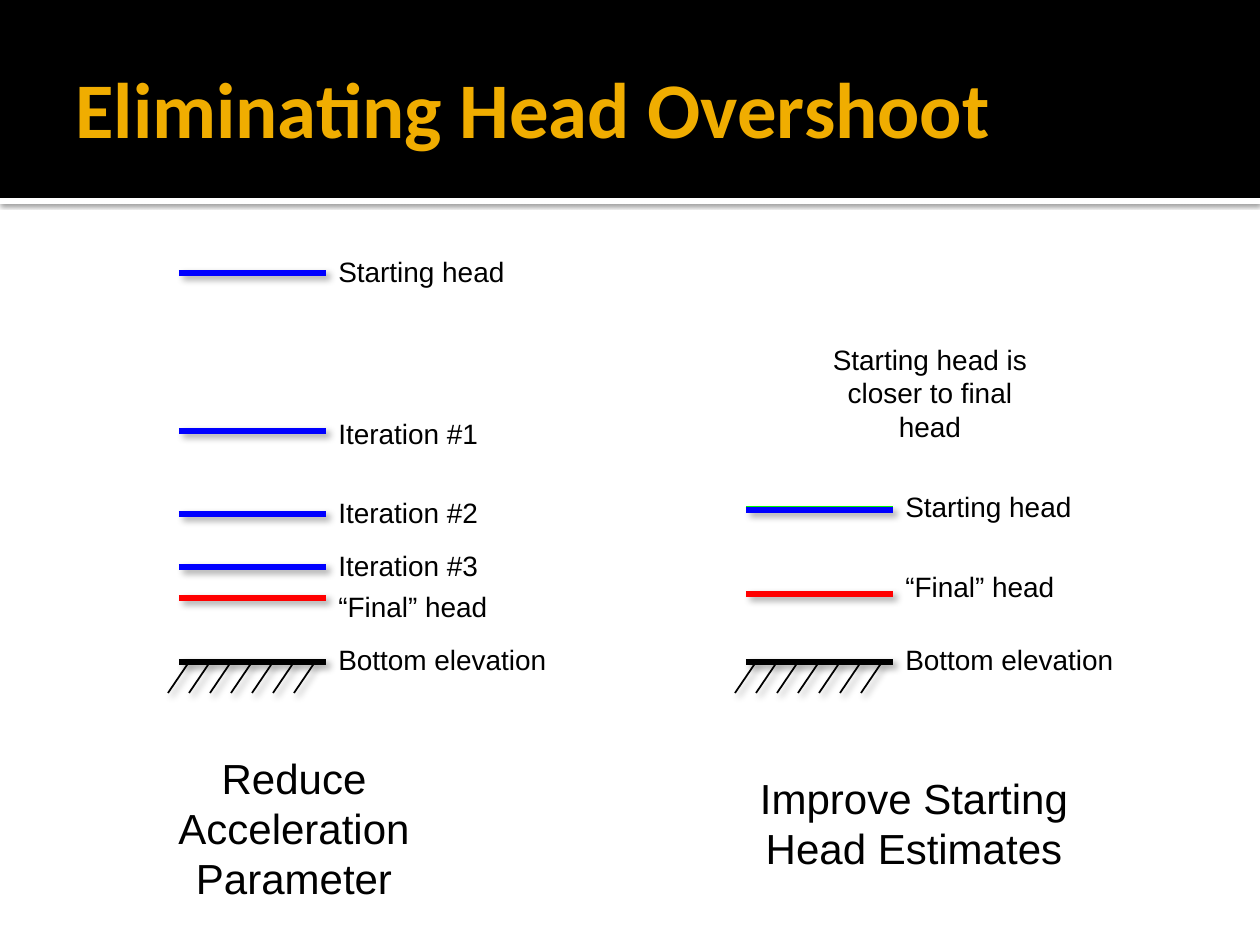
from lxml.etree import SubElement
from pptx import Presentation
from pptx.dml.color import RGBColor
from pptx.enum.shapes import MSO_CONNECTOR, MSO_SHAPE
from pptx.enum.text import MSO_ANCHOR, MSO_AUTO_SIZE, PP_ALIGN
from pptx.oxml.ns import qn
from pptx.util import Pt

SCALE = 914400 / 126
BLACK, WHITE, RED, GREEN, BLUE = "000000", "FFFFFF", "FF0000", "00FF00", "0000FF"
GOLD = "F0AD00"
LEFT, RIGHT = 179, 746  # left ends of the head lines in the two diagrams
LINE_LENGTH = 147
BOTTOM_Y = 662


def px(n):
    return round(n * SCALE)


def color(hex_string):
    return RGBColor.from_string(hex_string)


def add_shadow(sp, alpha, blur, distance, angle):
    """Lengths are points, alpha is per cent and angle is degrees."""
    effects = SubElement(sp._element.spPr, qn("a:effectLst"))
    shadow = SubElement(effects, qn("a:outerShdw"), blurRad=str(Pt(blur)),
                        dist=str(Pt(distance)), dir=str(angle * 60000),
                        algn="ctr", rotWithShape="0")
    clr = SubElement(shadow, qn("a:srgbClr"), val=BLACK)
    SubElement(clr, qn("a:alpha"), val=str(alpha * 1000))


def add_band(s, y, height, fill):
    sp = s.shapes.add_shape(MSO_SHAPE.RECTANGLE, 0, px(y), px(1260), px(height))
    sp.fill.solid()
    sp.fill.fore_color.rgb = color(fill)
    sp.line.fill.background()
    return sp


def add_text(s, text, x, y, width, height, size=16, align=PP_ALIGN.LEFT):
    sp = s.shapes.add_textbox(px(x), px(y), px(width), px(height))
    tf = sp.text_frame
    tf.word_wrap = True
    tf.auto_size = MSO_AUTO_SIZE.SHAPE_TO_FIT_TEXT
    tf.text = text
    p = tf.paragraphs[0]
    p.alignment = align
    font = p.runs[0].font
    font.name, font.size = "Arial", Pt(size)
    font.color.rgb = color(BLACK)
    return sp


def add_title(s, text):
    tf = add_text(s, text, 63, 21, 1134, 173, 45).text_frame
    tf.auto_size = MSO_AUTO_SIZE.NONE
    tf.vertical_anchor = MSO_ANCHOR.MIDDLE
    font = tf.paragraphs[0].runs[0].font
    font.name, font.bold = "Calibri", True
    font.color.rgb = color(GOLD)


def add_line(s, x1, y1, x2, y2, stroke, width, shadow=True):
    line = s.shapes.add_connector(MSO_CONNECTOR.STRAIGHT,
                                  px(x1), px(y1), px(x2), px(y2))
    line.line.color.rgb = color(stroke)
    line.line.width = Pt(width)
    if shadow:
        add_shadow(line, 40, 4, 3, 45)
    else:
        SubElement(line._element.spPr, qn("a:effectLst"))


def add_level(s, x, y, stroke, shadow=True):
    add_line(s, x, y, x + LINE_LENGTH, y, stroke, 3, shadow)


def add_label(s, x, y, text):
    add_text(s, text, x + LINE_LENGTH, y, 242, 46)


def add_bottom(s, x):
    """Hatched ground line with its label."""
    add_level(s, x, BOTTOM_Y, BLACK)
    for i in range(7):
        top = x + 10 + 21 * i
        add_line(s, top, BOTTOM_Y, top - 21, BOTTOM_Y + 31, BLACK, 1)
    add_label(s, x, 636, "Bottom elevation")


def add_diagram(s, x, levels):
    add_bottom(s, x)
    for line_y, label_y, stroke, label in levels:
        add_level(s, x, line_y, stroke)
        add_label(s, x, label_y, label)


def main():
    prs = Presentation()
    prs.slide_width, prs.slide_height = px(1260), px(945)
    s = prs.slides.add_slide(prs.slide_layouts[6])

    add_shadow(add_band(s, 198, 6, WHITE), 60, 2.5, 0.8, 90)
    add_band(s, 0, 198, BLACK).shadow.inherit = False
    add_title(s, "Eliminating Head Overshoot")

    add_diagram(s, LEFT, [
        (273, 248, BLUE, "Starting head"),
        (431, 410, BLUE, "Iteration #1"),
        (514, 489, BLUE, "Iteration #2"),
        (567, 542, BLUE, "Iteration #3"),
        (598, 583, RED, "“Final” head"),
    ])
    add_text(s, "Reduce Acceleration Parameter", 126, 746, 336, 164, 24,
             PP_ALIGN.CENTER)

    add_level(s, RIGHT, 509, GREEN, shadow=False)
    add_diagram(s, RIGHT, [
        (510, 483, BLUE, "Starting head"),
        (594, 563, RED, "“Final” head"),
    ])
    add_text(s, "Starting head is closer to final head", 809, 336, 242, 113,
             align=PP_ALIGN.CENTER)
    add_text(s, "Improve Starting Head Estimates", 725, 766, 378, 113, 24,
             PP_ALIGN.CENTER)

    prs.save("out.pptx")


if __name__ == "__main__":
    main()
